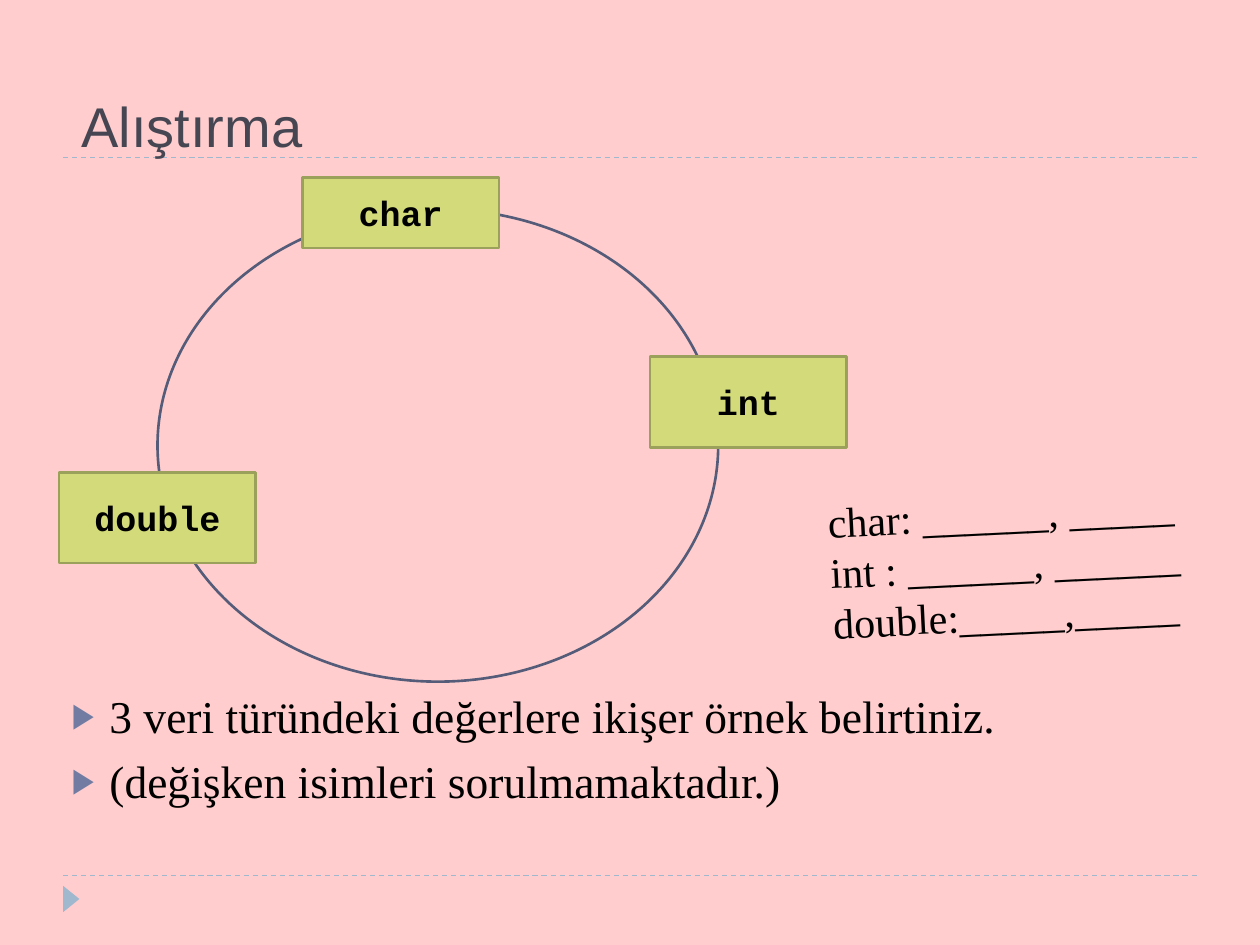
from lxml import etree
from pptx import Presentation
from pptx import util as u
from pptx.dml.color import RGBColor
from pptx.enum import dml, shapes, text
from pptx.oxml.ns import qn


def color(hex_code):
    """Turn a hex string into a colour."""
    return RGBColor.from_string(hex_code)


def inches(*values):
    """Turn numbers into lengths in inches."""
    return [u.Inches(v) for v in values]


def add_run(p, words, size, font, hex_code, bold=False):
    """Add one formatted run to a paragraph."""
    r = p.add_run()
    r.text = words
    r.font.size = u.Pt(size)
    r.font.name = font
    r.font.bold = bold
    r.font.color.rgb = color(hex_code)


def add_bullet(p):
    """Give a paragraph a hanging arrow bullet."""
    pPr = p._p.get_or_add_pPr()
    pPr.set("marL", str(u.Inches(0.3)))
    pPr.set("indent", str(u.Inches(-0.3)))
    clr = etree.SubElement(pPr, qn("a:buClr"))
    etree.SubElement(clr, qn("a:srgbClr"), val="727CA3")
    etree.SubElement(pPr, qn("a:buSzPct"), val="76000")
    etree.SubElement(pPr, qn("a:buFont"), typeface="Arial")
    etree.SubElement(pPr, qn("a:buChar"), char="▶")


def add_shape(s, kind, box, fill=None, line=None):
    """Add a flat preset shape."""
    sp = s.shapes.add_shape(kind, *inches(*box))
    sp.shadow.inherit = False
    if fill:
        sp.fill.solid()
        sp.fill.fore_color.rgb = color(fill)
    else:
        sp.fill.background()
    if line:
        sp.line.color.rgb = color(line)
        sp.line.width = u.Pt(1.5)
    else:
        sp.line.fill.background()
    return sp


def add_text(s, box, lines, size, font, hex_code="000000", anchor="TOP", bullets=False):
    """Add a text box with one paragraph per line."""
    sp = s.shapes.add_textbox(*inches(*box))
    tf = sp.text_frame
    tf.word_wrap = True
    tf.vertical_anchor = text.MSO_ANCHOR[anchor]
    for i, words in enumerate(lines):
        p = tf.paragraphs[0] if i == 0 else tf.add_paragraph()
        if bullets:
            p.space_before = u.Pt(6)
            add_bullet(p)
        add_run(p, words, size, font, hex_code)
    return sp


def add_rule(s, left, top, width):
    """Add a dashed horizontal rule."""
    line = s.shapes.add_connector(shapes.MSO_CONNECTOR.STRAIGHT, *inches(left, top, left + width, top))
    line.line.color.rgb = color("9FB8CD")
    line.line.width = u.Pt(0.75)
    line.line.dash_style = dml.MSO_LINE.DASH
    etree.SubElement(line._element.spPr, qn("a:effectLst"))


def add_frame(s, left, top, width, height):
    """Add the header and footer rules and the footer arrow."""
    add_rule(s, left, top + height, width)
    add_rule(s, left, top, width)
    arrow = add_shape(s, shapes.MSO_SHAPE.ISOSCELES_TRIANGLE,
                      (left - 0.04, top + height + 0.12, 0.21, 0.13), "9FB8CD")
    arrow.rotation = 90


def add_type_box(s, box, name):
    """Add a box naming a data type."""
    sp = add_shape(s, shapes.MSO_SHAPE.RECTANGLE, box, "D2DA7A", "9BA15A")
    tf = sp.text_frame
    tf.word_wrap = True
    tf.vertical_anchor = text.MSO_ANCHOR.MIDDLE
    tf.margin_left = tf.margin_right = u.Inches(0.2)
    p = tf.paragraphs[0]
    p.alignment = text.PP_ALIGN.CENTER
    add_run(p, name, 20, "Courier New", "000000", True)


def add_type_ring(s, left, top, width, height):
    """Add the ellipse with the data type boxes on it."""
    add_shape(s, shapes.MSO_SHAPE.OVAL, (left, top, width, height), line="545C79")
    for name, dx, dy, h in (("double", -0.78, 2.09, 0.72),
                            ("int", 3.91, 1.17, 0.72),
                            ("char", 1.15, -0.25, 0.56)):
        add_type_box(s, (left + dx, top + dy, 1.56, h), name)


def add_answers(s, *box):
    """Add the tilted lines to fill in."""
    lines = ["char: ______, _____", "int : ______, ______", "double:_____,_____"]
    add_text(s, box, lines, 24, "Times New Roman").rotation = -3


def main():
    """Build and save the slide."""
    prs = Presentation()
    prs.slide_width, prs.slide_height = inches(10, 7.5)
    s = prs.slides.add_slide(prs.slide_layouts[6])
    s.background.fill.solid()
    s.background.fill.fore_color.rgb = color("FFCDCD")
    add_frame(s, 0.5, 1.25, 9, 5.7)
    add_text(s, (0.55, 0.23, 9, 1.08), ["Alıştırma"], 32, "Arial", "464653", "BOTTOM")
    add_type_ring(s, 1.25, 1.66, 4.45, 3.75)
    add_text(s, (0.47, 5.41, 9, 1.09),
             ["3 veri türündeki değerlere ikişer örnek belirtiniz.",
              "(değişken isimleri sorulmamaktadır.)"],
             26, "Times New Roman", bullets=True)
    add_answers(s, 6.49, 3.81, 3.29, 1.31)
    prs.save("out.pptx")


if __name__ == "__main__":
    main()
